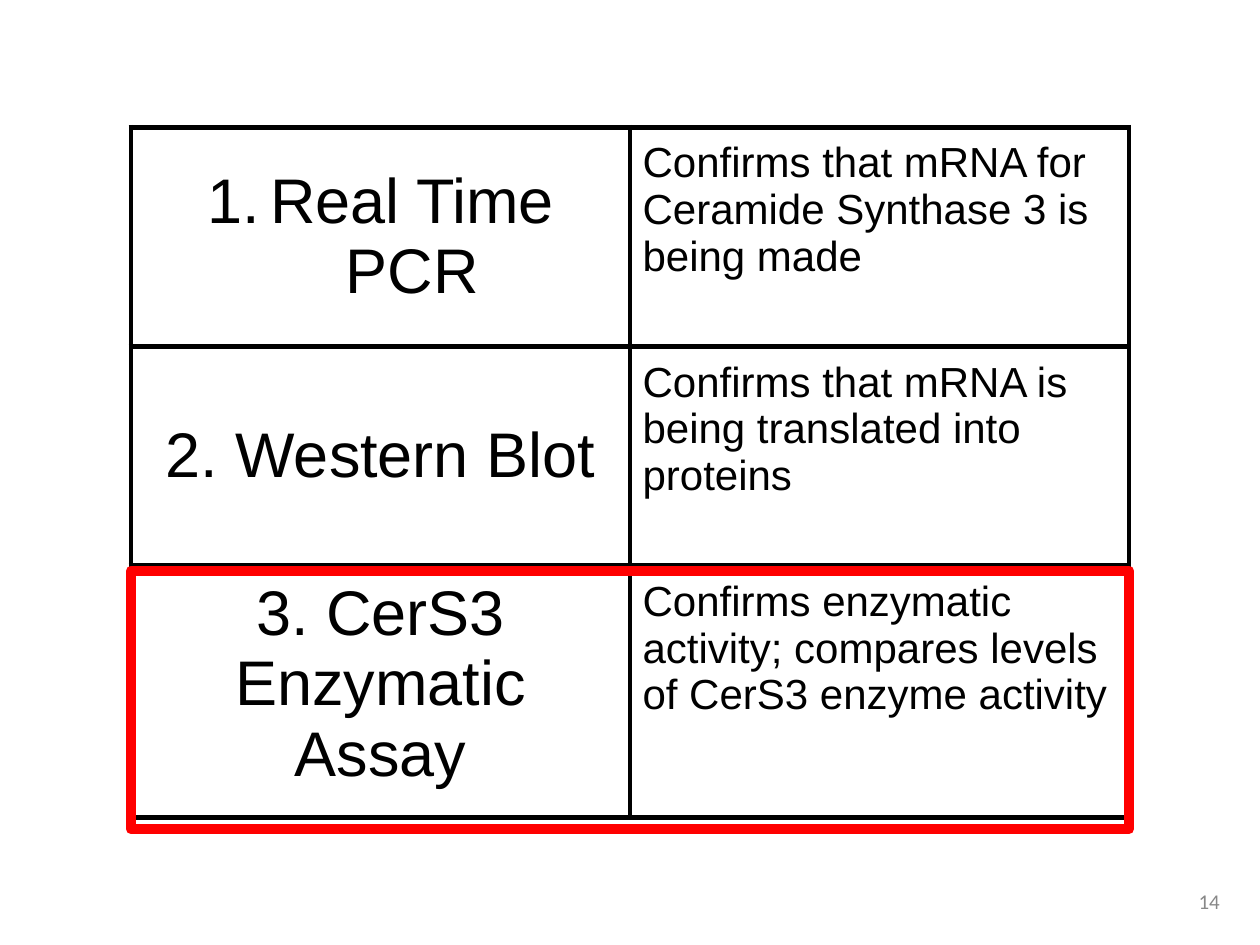
from lxml import etree
from pptx import Presentation
from pptx.enum import shapes, text
from pptx.dml.color import RGBColor
from pptx.oxml.ns import qn
from pptx.util import Inches, Pt

COLORS = {"ink": "000000", "highlight": "FF0000", "number": "888888"}
ASSAYS = [
    ("Real Time PCR", "Confirms that mRNA for Ceramide Synthase 3 is being made"),
    ("2. Western Blot", "Confirms that mRNA is being translated into proteins"),
    ("3. CerS3 Enzymatic Assay",
     "Confirms enzymatic activity; compares levels of CerS3 enzyme activity"),
]
PAGE_NUMBER = "14"
LEFT, TOP, WIDTH, ROW_HEIGHT = 1.04, 1.01, 7.92, 1.74
MIDDLE, TOP_ANCHOR = text.MSO_ANCHOR.MIDDLE, text.MSO_ANCHOR.TOP


def color(name):
    return RGBColor.from_string(COLORS[name])


def style(paragraph, size, font, ink, align):
    paragraph.alignment = align
    paragraph.font.size = Pt(size)
    paragraph.font.name = font
    paragraph.font.color.rgb = color(ink)


def add_borders(cell, width=3):
    properties = cell._tc.get_or_add_tcPr()
    for position, side in enumerate(("lnL", "lnR", "lnT", "lnB")):
        line = etree.Element(qn(f"a:{side}"), w=str(Pt(width)))
        fill = etree.SubElement(line, qn("a:solidFill"))
        etree.SubElement(fill, qn("a:srgbClr"), val=COLORS["ink"])
        properties.insert(position, line)


def number_paragraph(paragraph):
    """Give the paragraph an automatic "1." with a hanging indent."""
    properties = paragraph._p.get_or_add_pPr()
    properties.set("marL", str(Inches(0.5)))
    properties.set("indent", str(Inches(-0.5)))
    etree.SubElement(properties, qn("a:buFont"), typeface="+mj-lt")
    etree.SubElement(properties, qn("a:buAutoNum"), type="arabicPeriod")


def fill_cell(cell, words, size, align, anchor, numbered=False):
    cell.fill.background()
    add_borders(cell)
    cell.margin_left = cell.margin_right = Inches(0.1)
    cell.margin_top = cell.margin_bottom = Inches(0.1)
    cell.vertical_anchor = anchor
    cell.text = words
    paragraph = cell.text_frame.paragraphs[0]
    if numbered:
        number_paragraph(paragraph)
    style(paragraph, size, "Arial", "ink", align)


def add_assay_table(slide):
    table = slide.shapes.add_table(
        len(ASSAYS), 2, Inches(LEFT), Inches(TOP),
        Inches(WIDTH), Inches(ROW_HEIGHT * len(ASSAYS))).table
    table.first_row = table.horz_banding = False
    for column in table.columns:
        column.width = Inches(WIDTH / 2)
    last = len(ASSAYS) - 1
    for row, (assay, purpose) in enumerate(ASSAYS):
        table.rows[row].height = Inches(ROW_HEIGHT)
        fill_cell(table.cell(row, 0), assay, 36, text.PP_ALIGN.CENTER,
                  TOP_ANCHOR if row == last else MIDDLE, numbered=row == 0)
        fill_cell(table.cell(row, 1), purpose, 24, text.PP_ALIGN.LEFT, TOP_ANCHOR)


def add_highlight(slide):
    frame = slide.shapes.add_shape(
        shapes.MSO_SHAPE.RECTANGLE, Inches(LEFT), Inches(4.53),
        Inches(WIDTH), Inches(2.05))
    frame.shadow.inherit = False
    frame.fill.background()
    frame.line.color.rgb = color("highlight")
    frame.line.width = Pt(6)
    etree.SubElement(frame.line._get_or_add_ln(), qn("a:round"))


def add_page_number(slide):
    number = slide.shapes.add_textbox(
        Inches(7.45), Inches(6.95), Inches(2.33), Inches(0.4)).text_frame
    number.word_wrap = True
    number.vertical_anchor = MIDDLE
    number.text = PAGE_NUMBER
    style(number.paragraphs[0], 12, "Calibri", "number", text.PP_ALIGN.RIGHT)


def main():
    deck = Presentation()
    deck.slide_width, deck.slide_height = Inches(10), Inches(7.5)
    slide = deck.slides.add_slide(deck.slide_layouts[6])
    add_page_number(slide)
    add_assay_table(slide)
    add_highlight(slide)
    deck.save("out.pptx")


if __name__ == "__main__":
    main()
